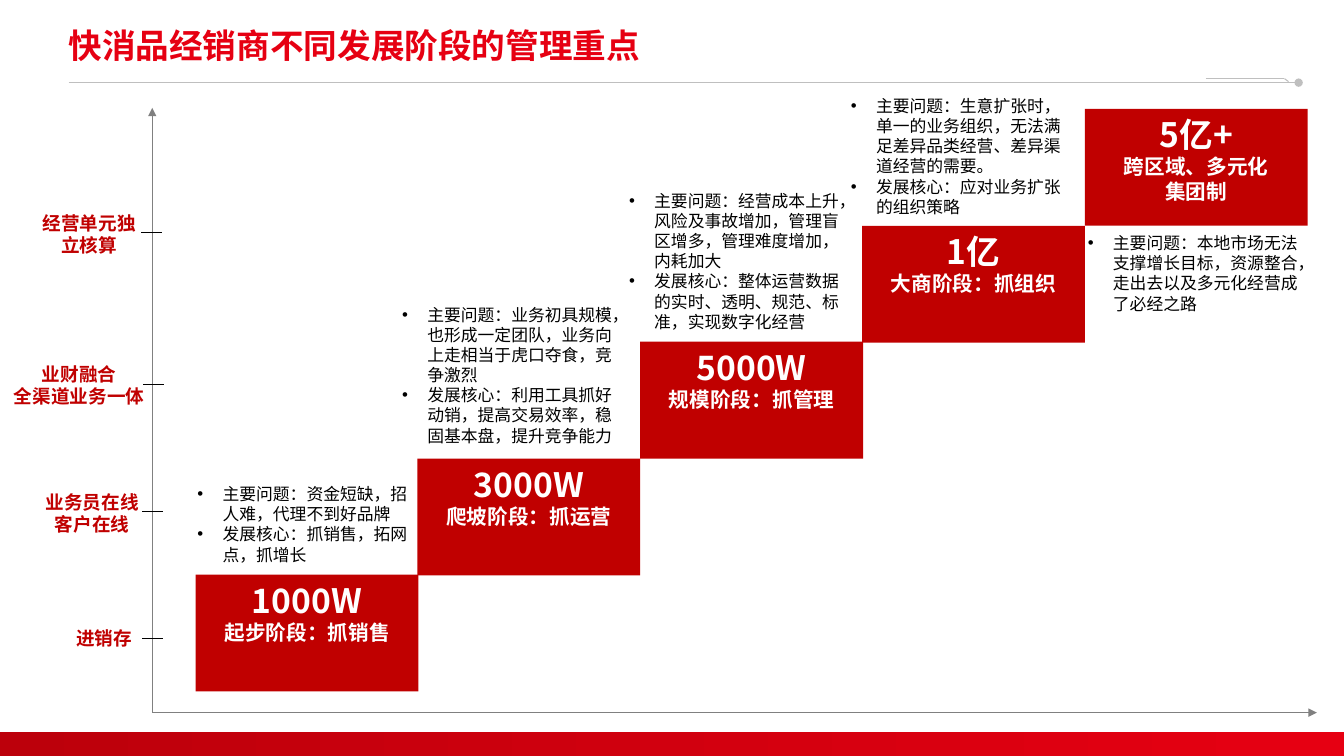
from dataclasses import dataclass

from lxml.etree import SubElement
from pptx import Presentation
from pptx.dml.color import RGBColor
from pptx.enum.shapes import MSO_CONNECTOR, MSO_SHAPE
from pptx.enum.text import MSO_ANCHOR, PP_ALIGN
from pptx.oxml.ns import qn
from pptx.util import Pt

PX = 9144


@dataclass(frozen=True)
class Theme:
    font: str = "Noto Sans CJK SC"
    title: str = "E60012"
    footer_dark: str = "BC000B"
    red: str = "C00000"
    white: str = "FFFFFF"
    black: str = "000000"
    axis: str = "808080"
    rule: str = "BFBFBF"
    title_size: float = 24
    stage_size: float = 14.7
    label_size: float = 13.3
    note_size: float = 12


class StageSlide:
    def __init__(self, presentation, theme):
        self.theme = theme
        self.slide = presentation.slides.add_slide(presentation.slide_layouts[6])

    def fill_text(self, frame, lines, color, bold=True, align=PP_ALIGN.CENTER, bullet=False):
        frame.word_wrap = True
        for index, (text, size) in enumerate(lines):
            paragraph = frame.paragraphs[0] if index == 0 else frame.add_paragraph()
            paragraph.text = text
            paragraph.alignment = align
            if bullet:
                properties = paragraph._p.get_or_add_pPr()
                properties.set("marL", str(25 * PX))
                properties.set("indent", str(-25 * PX))
                SubElement(properties, qn("a:buFont")).set("typeface", "Arial")
                SubElement(properties, qn("a:buChar")).set("char", "•")
            font = paragraph.font
            font.name = self.theme.font
            font.size = Pt(size)
            font.bold = bold
            font.color.rgb = RGBColor.from_string(color)
            defaults = paragraph._p.pPr.find(qn("a:defRPr"))
            SubElement(defaults, qn("a:ea")).set("typeface", self.theme.font)

    def rectangle(self, *box):
        shape = self.slide.shapes.add_shape(MSO_SHAPE.RECTANGLE, *(v * PX for v in box))
        shape.shadow.inherit = False
        shape.line.fill.background()
        return shape

    def text_box(self, *box):
        return self.slide.shapes.add_textbox(*(v * PX for v in box)).text_frame

    def footer(self, *box):
        fill = self.rectangle(*box).fill
        fill.gradient()
        fill.gradient_angle = 0
        for stop, color in zip(fill.gradient_stops, (self.theme.footer_dark, self.theme.title)):
            stop.color.rgb = RGBColor.from_string(color)

    def title(self, text, *box):
        frame = self.text_box(*box)
        frame.margin_left = 0
        frame.vertical_anchor = MSO_ANCHOR.MIDDLE
        self.fill_text(frame, [(text, self.theme.title_size)], self.theme.title, align=PP_ALIGN.LEFT)
        frame.paragraphs[0].line_spacing = 0.9

    def stage(self, scale, captions, *box):
        shape = self.rectangle(*box)
        shape.fill.solid()
        shape.fill.fore_color.rgb = RGBColor.from_string(self.theme.red)
        shape.text_frame.vertical_anchor = MSO_ANCHOR.TOP
        lines = [(scale, self.theme.title_size)]
        lines += [(caption, self.theme.stage_size) for caption in captions]
        self.fill_text(shape.text_frame, lines, self.theme.white)

    def note(self, points, *box):
        lines = [(point, self.theme.note_size) for point in points]
        self.fill_text(self.text_box(*box), lines, self.theme.black, False, PP_ALIGN.LEFT, True)

    def label(self, texts, *box):
        lines = [(text, self.theme.label_size) for text in texts]
        self.fill_text(self.text_box(*box), lines, self.theme.red)

    def line(self, start, end, color, width, tail=None):
        points = (v * PX for v in (*start, *end))
        connector = self.slide.shapes.add_connector(MSO_CONNECTOR.STRAIGHT, *points)
        connector.line.color.rgb = RGBColor.from_string(color)
        connector.line.width = Pt(width)
        if tail:
            SubElement(connector.line._get_or_add_ln(), qn("a:tailEnd")).set("type", tail)
        SubElement(connector._element.spPr, qn("a:effectLst"))


STAGES = [
    ("1000W", ["起步阶段：抓销售"]),
    ("3000W", ["爬坡阶段：抓运营"]),
    ("5000W", ["规模阶段：抓管理"]),
    ("1亿", ["大商阶段：抓组织"]),
    ("5亿+", ["跨区域、多元化", "集团制"]),
]

NOTES = [
    ((186, 475, 236, 91), [
        "主要问题：资金短缺，招人难，代理不到好品牌",
        "发展核心：抓销售，拓网点，抓增长",
    ]),
    ((389, 297, 239, 151), [
        "主要问题：业务初具规模，也形成一定团队，业务向上走相当于虎口夺食，竞争激烈",
        "发展核心：利用工具抓好动销，提高交易效率，稳固基本盘，提升竞争能力",
    ]),
    ((614, 184, 241, 151), [
        "主要问题：经营成本上升，风险及事故增加，管理盲区增多，管理难度增加，内耗加大",
        "发展核心：整体运营数据的实时、透明、规范、标准，实现数字化经营",
    ]),
    ((834, 90, 241, 131), [
        "主要问题：生意扩张时，单一的业务组织，无法满足差异品类经营、差异渠道经营的需要。",
        "发展核心：应对业务扩张的组织策略",
    ]),
    ((1069, 226, 241, 91), [
        "主要问题：本地市场无法支撑增长目标，资源整合，走出去以及多元化经营成了必经之路",
    ]),
]

LEVELS = [
    ((141, 633), (43, 617, 121, 33), ["进销存"]),
    ((141, 507), (31, 482, 121, 55), ["业务员在线", "客户在线"]),
    ((142, 381), (0, 355, 157, 55), ["业财融合", "全渠道业务一体"]),
    ((140, 231), (28, 205, 121, 55), ["经营单元独立核算"]),
]


def main():
    presentation = Presentation()
    presentation.slide_width = 1333 * PX
    presentation.slide_height = 750 * PX
    theme = Theme()
    page = StageSlide(presentation, theme)

    page.footer(0, 726, 1333, 24)
    page.line((68, 82), (1288, 82), theme.rule, 0.75, "oval")
    page.line((1196, 78), (1274, 78), theme.rule, 0.75)
    page.line((1274, 78), (1278, 81), theme.rule, 0.75)
    page.title("快消品经销商不同发展阶段的管理重点", 68, 22, 1008, 50)

    for index, (scale, captions) in enumerate(STAGES):
        left, top = 194 + index * 441 // 2, 570 - index * 231 // 2
        page.stage(scale, captions, left, top, 221, 116)
    for box, points in NOTES:
        page.note(points, *box)

    origin = (151, 707)
    for end in ((151, 107), (1306, 707)):
        page.line(origin, end, theme.axis, 1, "triangle")
    for (left, top), box, texts in LEVELS:
        page.line((left, top), (left + 21, top), theme.black, 0.5)
        page.label(texts, *box)

    presentation.save("out.pptx")


if __name__ == "__main__":
    main()
